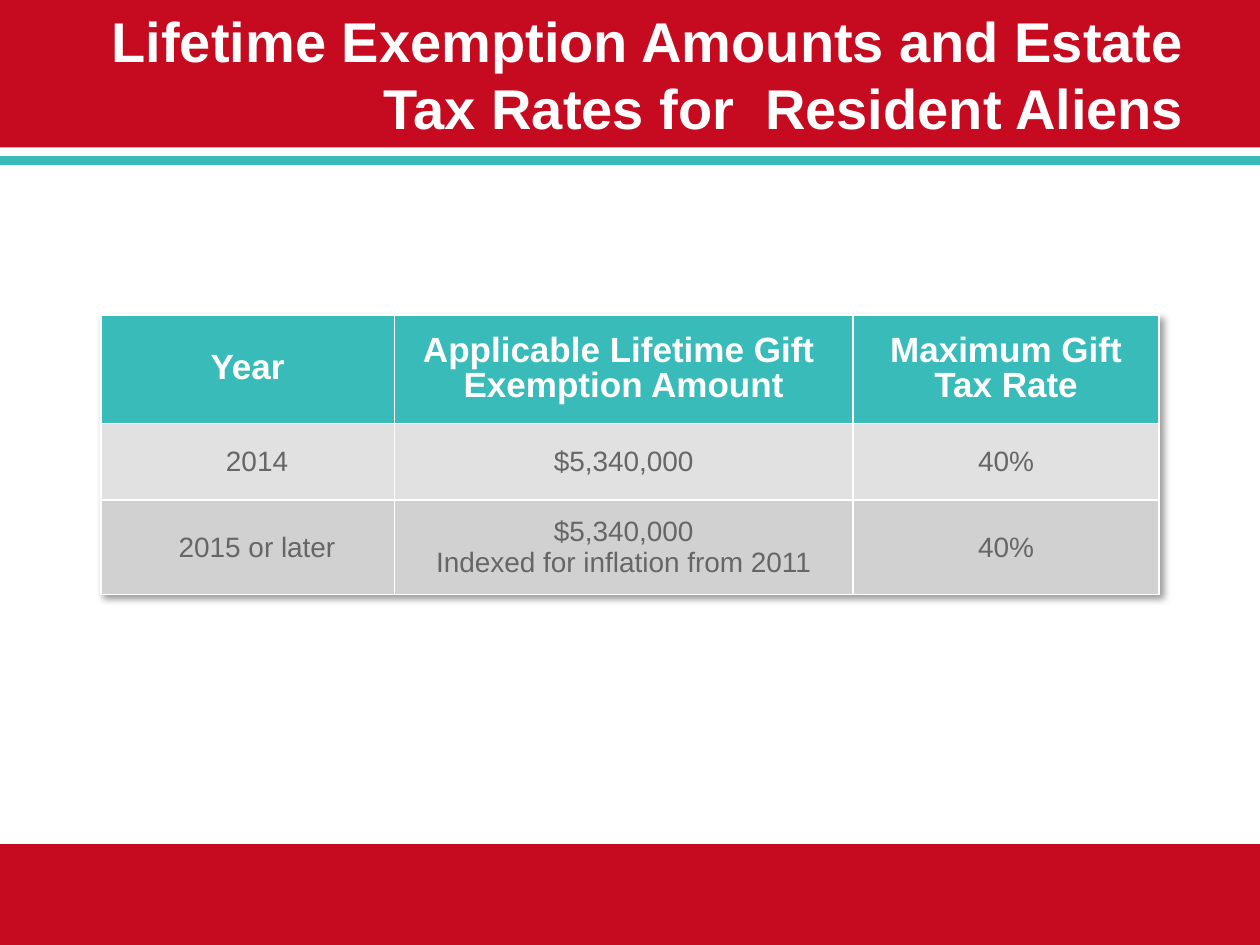
"""Build a slide with a table of lifetime exemption amounts and tax rates."""
from dataclasses import dataclass

from lxml.etree import SubElement
from pptx import Presentation
from pptx.dml.color import RGBColor
from pptx.enum.shapes import MSO_SHAPE
from pptx.enum.text import MSO_ANCHOR, MSO_AUTO_SIZE, PP_ALIGN
from pptx.oxml.ns import qn
from pptx.util import Inches, Pt


@dataclass(frozen=True)
class Theme:
    red: str = "C60B20"
    teal: str = "38BBB9"
    white: str = "FFFFFF"
    text: str = "666666"
    shadow: str = "000000"
    light_row: str = "E1E1E1"
    dark_row: str = "D1D1D1"
    font: str = "Arial"
    title_size: int = 32
    header_size: int = 20
    body_size: int = 16


theme = Theme()


def add_text(paragraph, text, size, color, bold):
    for index, line in enumerate(text.split("\n")):
        if index:
            paragraph.add_line_break()
        run = paragraph.add_run()
        run.text = line
        run.font.name = theme.font
        run.font.size = Pt(size)
        run.font.bold = bold
        run.font.color.rgb = RGBColor.from_string(color)


def add_borders(cell, color):
    properties = cell._tc.get_or_add_tcPr()
    for side in ("lnL", "lnR", "lnT", "lnB"):
        line = SubElement(properties, qn(f"a:{side}"), w=str(Pt(1)))
        fill = SubElement(line, qn("a:solidFill"))
        SubElement(fill, qn("a:srgbClr"), val=color)


presentation = Presentation()
presentation.slide_width = Inches(10)
presentation.slide_height = Inches(7.5)
slide = presentation.slides.add_slide(presentation.slide_layouts[5])
title = slide.shapes.title

bands = [(0, 1.17, theme.red), (1.24, 0.07, theme.teal), (6.7, 0.8, theme.red)]
for top, height, color in bands:
    band = slide.shapes.add_shape(
        MSO_SHAPE.RECTANGLE, 0, Inches(top), Inches(10), Inches(height)
    )
    band.shadow.inherit = False
    band.fill.solid()
    band.fill.fore_color.rgb = RGBColor.from_string(color)
    band.line.fill.background()
    title.element.addprevious(band.element)

title.left, title.top = Inches(0.5), Inches(0.04)
title.width, title.height = Inches(9), Inches(1.13)
title.text_frame.word_wrap = True
title.text_frame.auto_size = MSO_AUTO_SIZE.NONE
title.text_frame.vertical_anchor = MSO_ANCHOR.BOTTOM
paragraph = title.text_frame.paragraphs[0]
paragraph.alignment = PP_ALIGN.RIGHT
add_text(
    paragraph,
    "Lifetime Exemption Amounts and Estate Tax Rates for  Resident Aliens",
    theme.title_size, theme.white, True,
)

column_widths = [2.33, 3.64, 2.43]
row_heights = [0.86, 0.61, 0.75]
row_fills = [theme.teal, theme.light_row, theme.dark_row]
rows = [
    [["Year"], ["Applicable Lifetime Gift \nExemption Amount"], ["Maximum Gift\nTax Rate"]],
    [["2014"], ["$5,340,000"], ["40%"]],
    [["2015 or later"], ["$5,340,000", "Indexed for inflation from 2011"], ["40%"]],
]
table = slide.shapes.add_table(
    len(rows), len(column_widths), Inches(0.8), Inches(2.5),
    Inches(sum(column_widths)), Inches(sum(row_heights)),
).table
for column, width in zip(table.columns, column_widths):
    column.width = Inches(width)
for row, height in zip(table.rows, row_heights):
    row.height = Inches(height)

effects = SubElement(table._tbl.tblPr, qn("a:effectLst"))
table._tbl.tblPr.insert(0, effects)
shadow = SubElement(
    effects, qn("a:outerShdw"), blurRad=str(Pt(4)), dist=str(Pt(3)),
    dir="2700000", algn="tl", rotWithShape="0",
)
shadow_color = SubElement(shadow, qn("a:srgbClr"), val=theme.shadow)
SubElement(shadow_color, qn("a:alpha"), val="40000")

for row_index, row in enumerate(rows):
    is_header = row_index == 0
    size = theme.header_size if is_header else theme.body_size
    color = theme.white if is_header else theme.text
    for column_index, lines in enumerate(row):
        cell = table.cell(row_index, column_index)
        add_borders(cell, theme.white)
        cell.fill.solid()
        cell.fill.fore_color.rgb = RGBColor.from_string(row_fills[row_index])
        cell.vertical_anchor = MSO_ANCHOR.MIDDLE
        if not is_header:
            cell.margin_left = Inches(0.05 if column_index else 0.2)
            cell.margin_right = Inches(0.05)
        for line_index, line in enumerate(lines):
            frame = cell.text_frame
            paragraph = frame.add_paragraph() if line_index else frame.paragraphs[0]
            paragraph.alignment = PP_ALIGN.CENTER
            paragraph.line_spacing = 0.9 if is_header else 1.0
            add_text(paragraph, line, size, color, is_header)

presentation.save("out.pptx")
